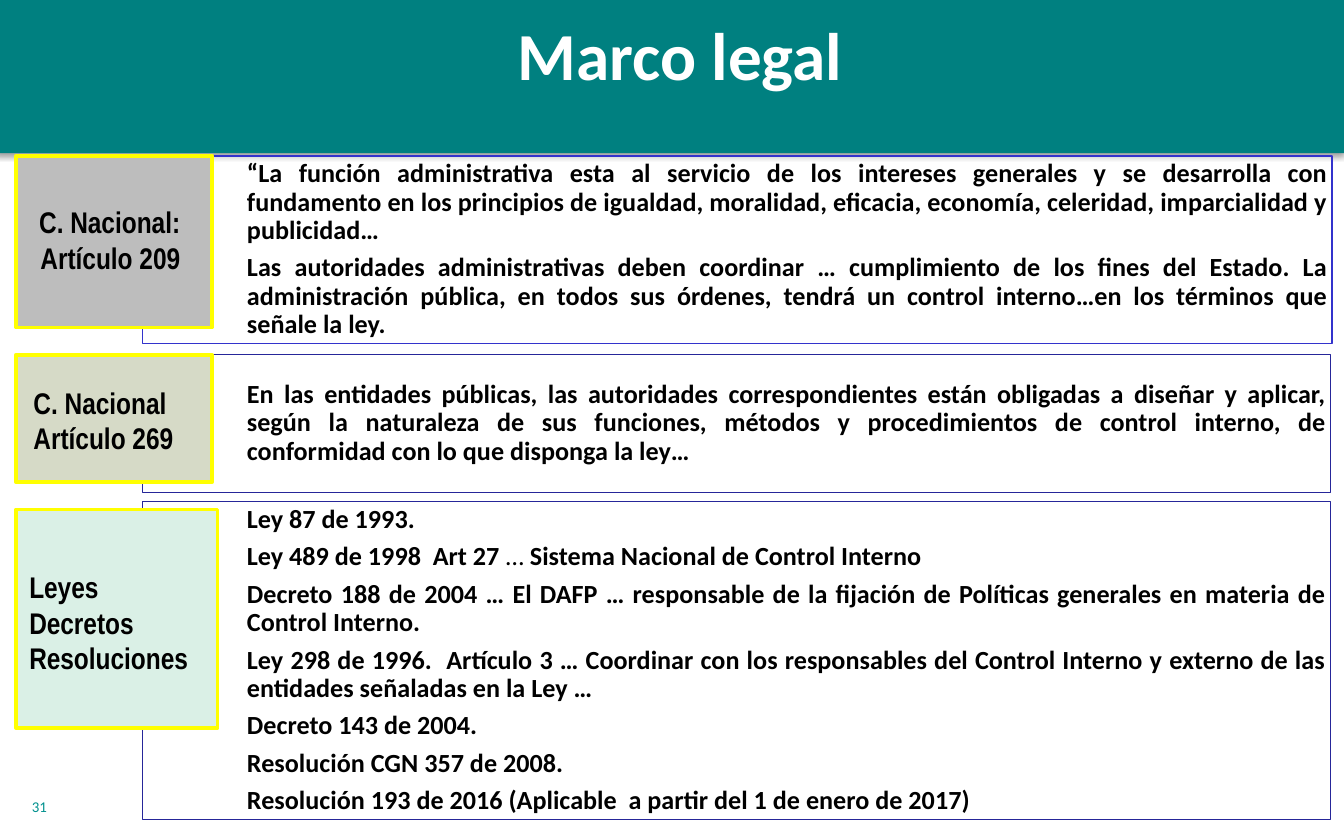
from dataclasses import dataclass

from lxml import etree
from pptx import Presentation
from pptx.dml.color import RGBColor
from pptx.enum import shapes, text
from pptx.oxml import ns
from pptx.util import Pt

TEAL = RGBColor(0x00, 0x80, 0x80)
NUMBER_TEAL = RGBColor(0x00, 0x91, 0x8E)
WHITE = RGBColor(0xFF, 0xFF, 0xFF)
BLACK = RGBColor(0x00, 0x00, 0x00)
YELLOW = RGBColor(0xFF, 0xFF, 0x00)
BLUE = RGBColor(0x33, 0x33, 0xCC)
NAVY = RGBColor(0x26, 0x26, 0x99)
GREY = RGBColor(0xBD, 0xBD, 0xBD)
SAGE = RGBColor(0xD6, 0xDA, 0xC7)
MINT = RGBColor(0xDA, 0xF0, 0xE6)

BODY_FONT, LABEL_FONT = "Calibri", "Arial Narrow"
PANEL_LEFT, TAG_LEFT = 76.3, 8.6
PLAIN_MARK = "|"  # encloses text that is not bold


@dataclass
class Box:
    left: float
    top: float
    width: float
    height: float

    def lengths(self) -> tuple:
        return Pt(self.left), Pt(self.top), Pt(self.width), Pt(self.height)


@dataclass
class Section:
    panel: Box
    border: RGBColor
    tag: Box
    tag_fill: RGBColor
    label_box: Box
    label: str
    label_alignment: text.PP_ALIGN
    paragraphs: list


SECTIONS = [
    Section(
        Box(PANEL_LEFT, 83.5, 637.2, 100.5), BLUE,
        Box(TAG_LEFT, 83.5, 105, 92), GREY,
        Box(2.9, 105.8, 100.8, 46), "C. Nacional: Artículo 209", text.PP_ALIGN.RIGHT,
        ["“La función administrativa esta al servicio de los intereses generales y se "
         "desarrolla con fundamento en los principios de igualdad, moralidad, eficacia, "
         "economía, celeridad, imparcialidad y publicidad…",
         "Las autoridades administrativas deben coordinar … cumplimiento de los fines del "
         "Estado. La administración pública, en todos sus órdenes, tendrá un control "
         "interno…en los términos que señale la ley."]),
    Section(
        Box(PANEL_LEFT, 190, 636.5, 73.8), NAVY,
        Box(TAG_LEFT, 190, 105, 68.4), SAGE,
        Box(-2.9, 202.3, 116.6, 46), "C. Nacional \nArtículo 269", text.PP_ALIGN.CENTER,
        ["En las entidades públicas, las autoridades correspondientes están obligadas a "
         "diseñar y aplicar, según la naturaleza de sus funciones, métodos y procedimientos "
         "de control interno, de conformidad con lo que disponga la ley…"]),
    Section(
        Box(PANEL_LEFT, 268.6, 636.5, 170.6), NAVY,
        Box(TAG_LEFT, 272.9, 108, 117.2), MINT,
        Box(TAG_LEFT, 301, 102.2, 65.5), "Leyes Decretos  Resoluciones", text.PP_ALIGN.LEFT,
        ["Ley 87 de 1993.",
         "Ley 489 de 1998  Art 27 |… |Sistema Nacional de Control Interno",
         "Decreto 188 de 2004 … El DAFP … responsable de la fijación de Políticas generales "
         "en materia de Control Interno.",
         "Ley 298 de 1996.  Artículo 3 … Coordinar con los responsables del Control Interno "
         "y externo de las entidades señaladas en la Ley …",
         "Decreto 143 de 2004.",
         "Resolución CGN 357 de 2008.",
         "Resolución 193 de 2016 (Aplicable  a partir del 1 de enero de 2017)"]),
]


def format_run(run, name: str, size: float, color: RGBColor, bold: bool) -> None:
    run.font.name, run.font.size, run.font.bold = name, Pt(size), bold
    run.font.color.rgb = color


def add_rectangle(slide, box: Box, fill: RGBColor, border=None, weight: float = 0):
    shape = slide.shapes.add_shape(shapes.MSO_SHAPE.RECTANGLE, *box.lengths())
    shape.shadow.inherit = False
    shape.fill.solid()
    shape.fill.fore_color.rgb = fill
    if border is None:
        shape.line.fill.background()
    else:
        shape.line.color.rgb = border
        shape.line.width = Pt(weight)
    return shape


def add_text(slide, box: Box, content: str, alignment: text.PP_ALIGN,
             name: str, size: float, color: RGBColor, bold: bool) -> None:
    frame = slide.shapes.add_textbox(*box.lengths()).text_frame
    frame.word_wrap = True
    frame.text = content
    for paragraph in frame.paragraphs:
        paragraph.alignment = alignment
        for run in paragraph.runs:
            format_run(run, name, size, color, bold)


def add_panel(slide, section: Section) -> None:
    shape = add_rectangle(slide, section.panel, WHITE, section.border, 0.75)
    color = shape.fill._xPr.find(".//" + ns.qn("a:srgbClr"))
    etree.SubElement(color, ns.qn("a:alpha"), val="40000")
    frame = shape.text_frame
    frame.word_wrap = True
    frame.vertical_anchor = text.MSO_ANCHOR.MIDDLE
    frame.margin_left = Pt(56)
    frame.margin_top = frame.margin_right = frame.margin_bottom = Pt(2)
    for index, content in enumerate(section.paragraphs):
        paragraph = frame.paragraphs[0] if index == 0 else frame.add_paragraph()
        paragraph.alignment = text.PP_ALIGN.JUSTIFY
        paragraph.line_spacing = 0.9
        paragraph.space_after = Pt(5)
        for part, piece in enumerate(content.split(PLAIN_MARK)):
            run = paragraph.add_run()
            run.text = piece
            format_run(run, BODY_FONT, 14, BLACK, part % 2 == 0)


def add_header(slide) -> None:
    band = add_rectangle(slide, Box(-2.9, -1.4, 722.9, 83.5), TEAL)
    effects = band._element.spPr.find(ns.qn("a:effectLst"))
    shadow = etree.SubElement(effects, ns.qn("a:outerShdw"), blurRad=str(Pt(3.1)),
                              dist=str(Pt(1.6)), dir="5400000", rotWithShape="0")
    color = etree.SubElement(shadow, ns.qn("a:srgbClr"), val="000000")
    etree.SubElement(color, ns.qn("a:alpha"), val="38000")

    # The title stands in front of the band
    title = slide.shapes.title
    band._element.addnext(title._element)
    title.left, title.top, title.width, title.height = Box(20.2, 3.6, 688.3, 69.1).lengths()
    frame = title.text_frame
    frame.text = "Marco legal"
    frame.auto_size = text.MSO_AUTO_SIZE.NONE
    frame.vertical_anchor = text.MSO_ANCHOR.TOP
    frame.paragraphs[0].alignment = text.PP_ALIGN.CENTER
    format_run(frame.paragraphs[0].runs[0], BODY_FONT, 36, WHITE, True)


def main() -> None:
    presentation = Presentation()
    presentation.slide_width, presentation.slide_height = Pt(720), Pt(450)
    slide = presentation.slides.add_slide(presentation.slide_layouts[5])

    # Header and slide number
    add_header(slide)
    add_text(slide, Box(10, 424, 150, 21.6), "31", text.PP_ALIGN.LEFT,
             BODY_FONT, 8, NUMBER_TEAL, False)

    # Legal sources, each with its tag
    for section in SECTIONS:
        add_panel(slide, section)
        add_rectangle(slide, section.tag, section.tag_fill, YELLOW, 2)
        add_text(slide, section.label_box, section.label, section.label_alignment,
                 LABEL_FONT, 16, BLACK, True)

    presentation.save("out.pptx")


if __name__ == "__main__":
    main()
